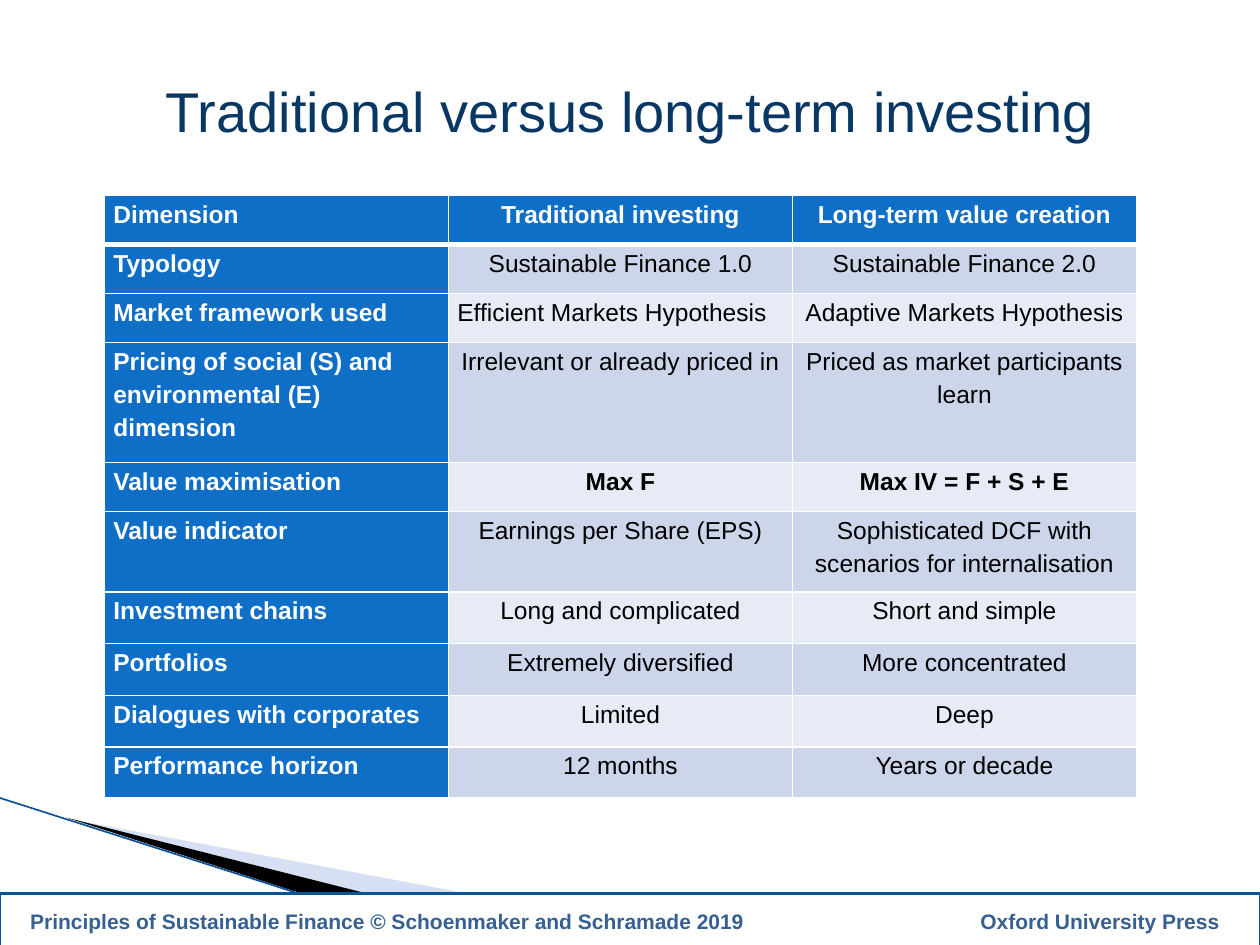
import pptx
import pptx.util
import pptx.dml.color
import pptx.enum.shapes
import pptx.enum.text
import pptx.oxml
import pptx.oxml.ns
from pptx.util import Inches

TITLE = "Traditional versus long-term investing"
FOOTER = "Principles of Sustainable Finance © Schoenmaker and Schramade 2019\tOxford University Press"
ROWS = [
    (0.39, "Dimension", "Traditional investing", "Long-term value creation"),
    (0.39, "Typology", "Sustainable Finance 1.0", "Sustainable Finance 2.0"),
    (0.39, "Market framework used", "Efficient Markets Hypothesis", "Adaptive Markets Hypothesis"),
    (0.95, "Pricing of social (S) and environmental (E) dimension",
     "Irrelevant or already priced in", "Priced as market participants learn"),
    (0.39, "Value maximisation", "Max F", "Max IV = F + S + E"),
    (0.64, "Value indicator", "Earnings per Share (EPS)",
     "Sophisticated DCF with scenarios for internalisation"),
    (0.41, "Investment chains", "Long and complicated", "Short and simple"),
    (0.41, "Portfolios", "Extremely diversified", "More concentrated"),
    (0.41, "Dialogues with corporates", "Limited", "Deep"),
    (0.4, "Performance horizon", "12 months", "Years or decade"),
]
BOLD_ROWS = {0, 4}
LEFT_CELLS = {(2, 1)}
COL_WIDTH = 2.73
HEADER, BANDS = "0F6FC6", ("E7EBF5", "CCD5EA")
WEDGES = [
    ([(0.55, 6.5), (5.95, 7.51), (4.56, 7.51)], "9DB2E1", 40),
    ([(0.53, 6.49), (4.57, 7.51), (3.72, 7.52)], "000000", 100),
]
ALIGN = pptx.enum.text.PP_ALIGN
ANCHOR = pptx.enum.text.MSO_ANCHOR
NS = pptx.oxml.ns.nsdecls("a")


def color(value):
    return pptx.dml.color.RGBColor.from_string(value)


def fill(obj, value):
    obj.fill.solid()
    obj.fill.fore_color.rgb = color(value)


def add_run(p, text, size, value, bold=False):
    r = p.add_run()
    r.text = text
    r.font.name = "Arial"
    r.font.size = pptx.util.Pt(size)
    r.font.bold = bold
    r.font.color.rgb = color(value)


def add_bar(s, left, top, width, height):
    sp = s.shapes.add_shape(pptx.enum.shapes.MSO_SHAPE.RECTANGLE,
                            Inches(left), Inches(top), Inches(width), Inches(height))
    sp.shadow.inherit = False
    fill(sp, "FFFFFF")
    sp.line.fill.background()
    sp.text_frame.word_wrap = True
    sp.text_frame.vertical_anchor = ANCHOR.MIDDLE
    return sp


def add_wedge(s, points, value, opacity):
    fb = s.shapes.build_freeform(*[Inches(v) for v in points[0]])
    fb.add_line_segments([(Inches(x), Inches(y)) for x, y in points[1:]])
    sp = fb.convert_to_shape()
    sp.shadow.inherit = False
    fill(sp, value)
    sp.line.fill.background()
    if opacity < 100:
        clr = sp.fill._xPr.find(".//" + pptx.oxml.ns.qn("a:srgbClr"))
        clr.append(pptx.oxml.parse_xml(f'<a:alpha {NS} val="{opacity * 1000}"/>'))


def set_borders(cell, widths):
    tcPr = cell._tc.get_or_add_tcPr()
    for side, width in widths.items():
        tcPr.append(pptx.oxml.parse_xml(
            f'<a:ln{side} {NS} w="{pptx.util.Pt(width)}"><a:solidFill>'
            f'<a:srgbClr val="FFFFFF"/></a:solidFill></a:ln{side}>'))


def add_comparison(s):
    heights = [row[0] for row in ROWS]
    table = s.shapes.add_table(len(ROWS), 3, Inches(0.83), Inches(1.55),
                               Inches(3 * COL_WIDTH), Inches(sum(heights))).table
    for col in table.columns:
        col.width = Inches(COL_WIDTH)
    for i, (height, *texts) in enumerate(ROWS):
        table.rows[i].height = Inches(height)
        for j, text in enumerate(texts):
            cell = table.cell(i, j)
            heading = i == 0 or j == 0
            set_borders(cell, {"L": 1, "R": 1, "T": 3 if i == 1 else 1, "B": 3 if i == 0 else 1})
            fill(cell, HEADER if heading else BANDS[i % 2])
            cell.margin_left = cell.margin_right = Inches(0.07)
            cell.margin_top = cell.margin_bottom = 0
            p = cell.text_frame.paragraphs[0]
            p.alignment = ALIGN.LEFT if j == 0 or (i, j) in LEFT_CELLS else ALIGN.CENTER
            p.line_spacing = 1.2
            p.space_after = pptx.util.Pt(6)
            add_run(p, text, 14, "FFFFFF" if heading else "000000", heading or i in BOLD_ROWS)


def add_footer(s):
    sp = add_bar(s, 0, 7.09, 10, 0.44)
    sp.line.color.rgb = color("0B5394")
    sp.line.width = pptx.util.Pt(1.5)
    tf = sp.text_frame
    tf.margin_left = Inches(0.24)
    p = tf.paragraphs[0]
    p.alignment = ALIGN.LEFT
    p._p.get_or_add_pPr().append(pptx.oxml.parse_xml(
        f'<a:tabLst {NS}><a:tab pos="{Inches(9.44)}" algn="r"/></a:tabLst>'))
    add_run(p, FOOTER, 12, "376092", True)


def main():
    prs = pptx.Presentation()
    prs.slide_width, prs.slide_height = Inches(10), Inches(7.5)
    s = prs.slides.add_slide(prs.slide_layouts[6])
    for wedge in WEDGES:
        add_wedge(s, *wedge)
    edge = s.shapes.add_connector(pptx.enum.shapes.MSO_CONNECTOR.STRAIGHT,
                                  Inches(-0.01), Inches(6.33), Inches(3.71), Inches(7.52))
    edge.line.color.rgb = color("0B5394")
    edge.line.width = pptx.util.Pt(0.95)
    edge._element.spPr.append(pptx.oxml.parse_xml(f"<a:effectLst {NS}/>"))
    p = add_bar(s, 0.28, 0.52, 9.45, 0.71).text_frame.paragraphs[0]
    p.alignment = ALIGN.CENTER
    add_run(p, TITLE, 32, "083763")
    add_footer(s)
    add_comparison(s)
    prs.save("out.pptx")


if __name__ == "__main__":
    main()
